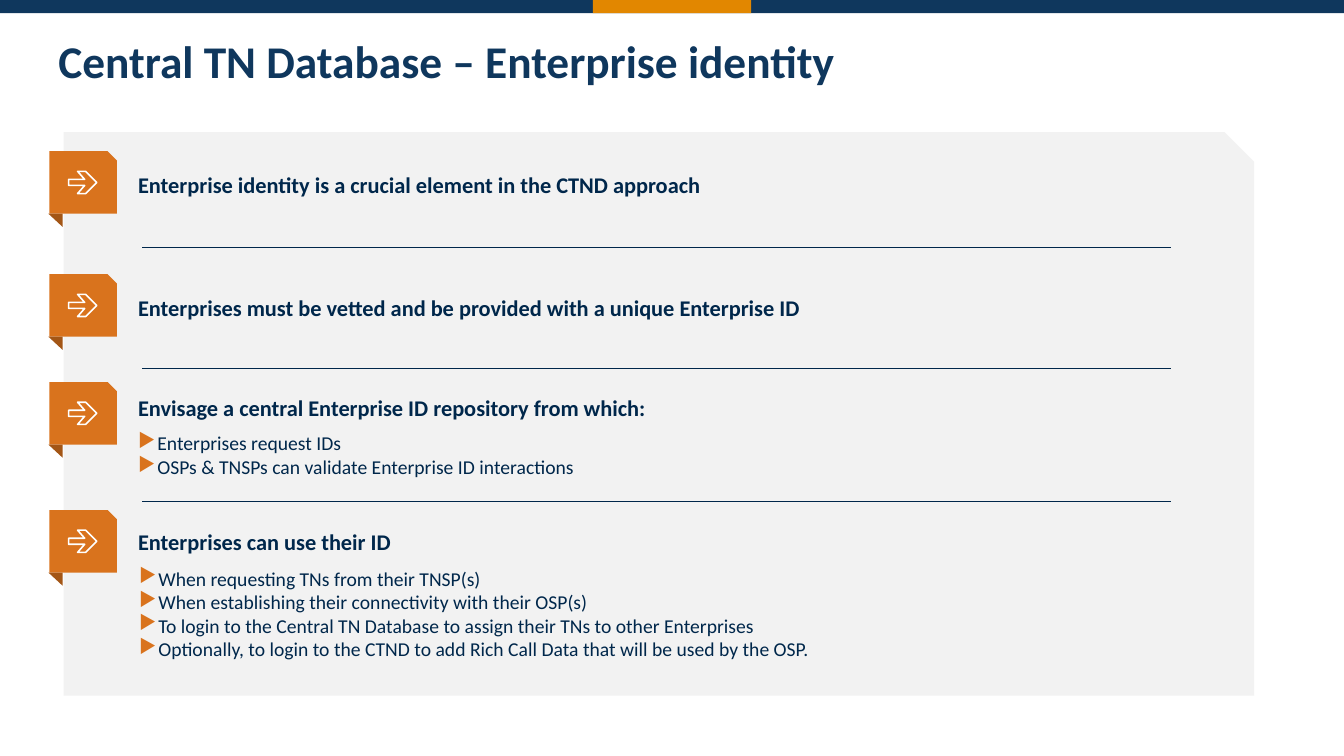
from lxml.etree import SubElement
from pptx import Presentation
from pptx.dml.color import RGBColor
from pptx.enum.shapes import MSO_CONNECTOR, MSO_SHAPE
from pptx.enum.text import MSO_ANCHOR, MSO_AUTO_SIZE, PP_ALIGN
from pptx.oxml.ns import qn
from pptx.util import Inches, Pt

FONT = "Calibri"
NAVY = RGBColor(0x0F, 0x37, 0x5D)
INK = RGBColor(0x00, 0x27, 0x4B)
AMBER = RGBColor(0xE2, 0x87, 0x00)
ORANGE = RGBColor(0xD9, 0x73, 0x1D)
BROWN = RGBColor(0xA3, 0x56, 0x16)
PALE = RGBColor(0xF2, 0xF2, 0xF2)
WHITE = RGBColor(0xFF, 0xFF, 0xFF)

# Badge top, heading top, heading, bullets' left and top, bullets
SECTIONS = [
    (1.5, 1.7, "Enterprise identity is a crucial element in the CTND approach", None, []),
    (2.72, 2.92, "Enterprises must be vetted and be provided with a unique Enterprise ID", None, []),
    (3.79, 3.91, "Envisage a central Enterprise ID repository from which:", (1.37, 4.28), [
        "Enterprises request IDs",
        "OSPs & TNSPs can validate Enterprise ID interactions",
    ]),
    (5.06, 5.24, "Enterprises can use their ID", (1.38, 5.62), [
        "When requesting TNs from their TNSP(s)",
        "When establishing their connectivity with their OSP(s)",
        "To login to the Central TN Database to assign their TNs to other Enterprises",
        "Optionally, to login to the CTND to add Rich Call Data that will be used by the OSP.",
    ]),
]
DIVIDERS = [2.45, 3.65, 4.97]
# Arrow outline, relative to the badge's left and top
ARROW = [(0.19, 0.28), (0.35, 0.28), (0.28, 0.2), (0.36, 0.2), (0.47, 0.31),
         (0.36, 0.42), (0.28, 0.42), (0.35, 0.34), (0.19, 0.34)]


def add_block(slide, kind, left, top, width, height, color):
    shape = slide.shapes.add_shape(kind, Inches(left), Inches(top), Inches(width), Inches(height))
    shape.shadow.inherit = False
    shape.fill.solid()
    shape.fill.fore_color.rgb = color
    shape.line.fill.background()
    return shape


def format_runs(paragraph, size, color, bold=False):
    for run in paragraph.runs:
        run.font.name = FONT
        run.font.size = Pt(size)
        run.font.bold = bold
        run.font.color.rgb = color


def add_title(slide, text):
    title = slide.shapes.title
    title.left, title.top = Inches(0.48), Inches(0.29)
    title.width, title.height = Inches(12.36), Inches(0.58)
    frame = title.text_frame
    frame.text = text
    frame.auto_size = MSO_AUTO_SIZE.NONE
    frame.vertical_anchor = MSO_ANCHOR.MIDDLE
    frame.margin_left = frame.margin_right = Inches(0.1)
    frame.margin_top, frame.margin_bottom = Inches(0.08), Inches(0.04)
    frame.paragraphs[0].alignment = PP_ALIGN.LEFT
    format_runs(frame.paragraphs[0], 32.4, NAVY, bold=True)


def add_text(slide, left, top, width, height, lines, size, bold=False):
    box = slide.shapes.add_textbox(Inches(left), Inches(top), Inches(width), Inches(height))
    frame = box.text_frame
    frame.word_wrap = True
    frame.auto_size = MSO_AUTO_SIZE.SHAPE_TO_FIT_TEXT
    frame.margin_left = frame.margin_right = frame.margin_top = frame.margin_bottom = 0
    frame.text = "\n".join(lines)
    for paragraph in frame.paragraphs:
        format_runs(paragraph, size, INK, bold)
    return frame


def add_bullets(slide, left, top, lines):
    frame = add_text(slide, left, top, 9.92, 0.235 * len(lines), lines, 14)
    indent = Inches(0.19)
    for paragraph in frame.paragraphs:
        properties = paragraph._p.get_or_add_pPr()
        properties.set("marL", str(indent))
        properties.set("indent", str(-indent))
        color = SubElement(properties, qn("a:buClr"))
        SubElement(color, qn("a:srgbClr"), val=str(ORANGE))
        SubElement(properties, qn("a:buChar"), char="▶")


def add_divider(slide, top):
    line = slide.shapes.add_connector(
        MSO_CONNECTOR.STRAIGHT, Inches(1.41), Inches(top), Inches(11.61), Inches(top))
    line.line.color.rgb = INK
    line.line.width = Pt(0.5)
    SubElement(line._element.spPr, qn("a:effectLst"))


def add_badge(slide, top):
    left = 0.49
    tag = add_block(slide, MSO_SHAPE.SNIP_1_RECTANGLE, left, top, 0.67, 0.62, ORANGE)
    tag.adjustments[0] = 0.149
    fold = add_block(slide, MSO_SHAPE.RIGHT_TRIANGLE, 0.48, top + 0.62, 0.14, 0.13, BROWN)
    fold.rotation = 180

    points = [(Inches(left + x), Inches(top + y)) for x, y in ARROW]
    builder = slide.shapes.build_freeform(*points[0])
    builder.add_line_segments(points[1:], close=True)
    arrow = builder.convert_to_shape()
    arrow.shadow.inherit = False
    arrow.fill.background()
    arrow.line.color.rgb = WHITE
    arrow.line.width = Pt(1.13)


def main():
    presentation = Presentation()
    presentation.slide_width = Inches(13.33)
    presentation.slide_height = Inches(7.5)
    slide = presentation.slides.add_slide(presentation.slide_layouts[5])

    # Top band and title
    add_block(slide, MSO_SHAPE.RECTANGLE, 0, 0, 13.33, 0.13, NAVY)
    add_block(slide, MSO_SHAPE.RECTANGLE, 5.88, 0, 1.57, 0.13, AMBER)
    add_title(slide, "Central TN Database – Enterprise identity")

    # Panel with dividers
    panel = add_block(slide, MSO_SHAPE.SNIP_1_RECTANGLE, 0.63, 1.31, 11.81, 5.59, PALE)
    panel.adjustments[0] = 0.053
    for top in DIVIDERS:
        add_divider(slide, top)

    # Sections
    for badge_top, heading_top, heading, bullets_at, bullets in SECTIONS:
        add_badge(slide, badge_top)
        add_text(slide, 1.37, heading_top, 10.43, 0.27, [heading], 16, bold=True)
        if bullets:
            add_bullets(slide, *bullets_at, bullets)

    presentation.save("out.pptx")


if __name__ == "__main__":
    main()
